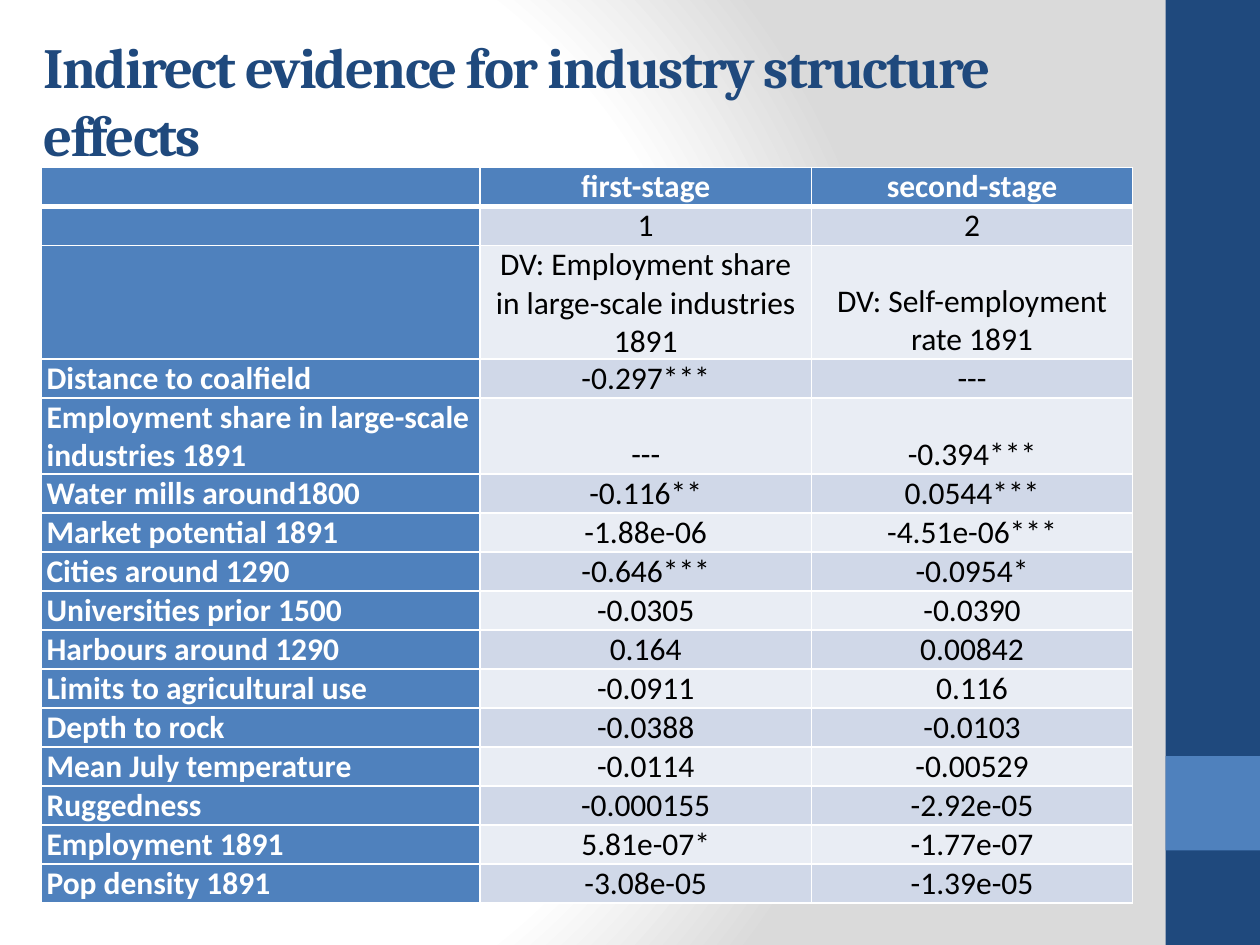
from typing import NamedTuple

from pptx import Presentation
from pptx.dml.color import RGBColor
from pptx.enum.shapes import MSO_SHAPE
from pptx.enum.text import MSO_ANCHOR, PP_ALIGN
from pptx.oxml import parse_xml
from pptx.oxml.ns import nsdecls
from pptx.util import Inches, Pt

RECT = MSO_SHAPE.RECTANGLE
LEFT, CENTER = PP_ALIGN.LEFT, PP_ALIGN.CENTER
TOP, MIDDLE, BOTTOM = MSO_ANCHOR.TOP, MSO_ANCHOR.MIDDLE, MSO_ANCHOR.BOTTOM

NAVY = RGBColor(0x1F, 0x49, 0x7D)
BLUE = RGBColor(0x4F, 0x81, 0xBD)
BAND_DARK = RGBColor(0xD0, 0xD8, 0xE8)
BAND_LIGHT = RGBColor(0xE9, 0xED, 0xF4)
WHITE = RGBColor(0xFF, 0xFF, 0xFF)
BLACK = RGBColor(0x00, 0x00, 0x00)
GREY = RGBColor(0xDA, 0xDA, 0xDA)


class Bar(NamedTuple):
    top: float
    height: float
    color: RGBColor


class Row(NamedTuple):
    label: str
    first: str
    second: str
    height: float = 0.31


BARS = [Bar(0, 7.5, NAVY), Bar(6, 0.75, BLUE)]
COL_WIDTHS = [3.48, 2.63, 2.55]
TOP_ROWS = 2  # rows whose text sits at the top of the cell
ROWS = [
    Row("", "first-stage", "second-stage"),
    Row("", "1", "2"),
    Row("", "DV: Employment share in large-scale industries 1891",
        "DV: Self-employment rate 1891", 0.58),
    Row("Distance to coalfield", "-0.297***", "---"),
    Row("Employment share in large-scale industries 1891", "---", "-0.394***", 0.58),
    Row("Water mills around1800", "-0.116**", "0.0544***"),
    Row("Market potential 1891", "-1.88e-06", "-4.51e-06***"),
    Row("Cities around 1290", "-0.646***", "-0.0954*"),
    Row("Universities prior 1500", "-0.0305", "-0.0390"),
    Row("Harbours around 1290", "0.164", "0.00842"),
    Row("Limits to agricultural use", "-0.0911", "0.116"),
    Row("Depth to rock", "-0.0388", "-0.0103"),
    Row("Mean July temperature", "-0.0114", "-0.00529"),
    Row("Ruggedness", "-0.000155", "-2.92e-05"),
    Row("Employment 1891", "5.81e-07*", "-1.77e-07"),
    Row("Pop density 1891", "-3.08e-05", "-1.39e-05"),
]


def write_text(tf, text: str, *, size: float = 18, font: str = "Calibri",
               color: RGBColor = BLACK, bold: bool = False,
               align: PP_ALIGN = LEFT, spacing: float = 0) -> None:
    p = tf.paragraphs[0]
    p.alignment = align
    p.font.size = Pt(size)
    if not text:
        return
    r = p.add_run()
    r.text = text
    r.font.size, r.font.name = Pt(size), font
    r.font.bold, r.font.color.rgb = bold, color
    if spacing:
        r.font._element.set("spc", str(int(spacing * 100)))


def set_background(slide) -> None:
    stops = "".join(
        f'<a:gs pos="{pos * 1000}"><a:srgbClr val="{color}"/></a:gs>'
        for pos, color in ((0, WHITE), (75, WHITE), (100, GREY)))
    slide.element.cSld.insert(0, parse_xml(
        f'<p:bg {nsdecls("p", "a")}><p:bgPr><a:gradFill rotWithShape="1">'
        f'<a:gsLst>{stops}</a:gsLst><a:path path="circle">'
        '<a:fillToRect l="20000" t="50000" r="100000" b="50000"/></a:path>'
        '</a:gradFill><a:effectLst/></p:bgPr></p:bg>'))


def add_bar(slide, bar: Bar) -> None:
    sp = slide.shapes.add_shape(RECT, Inches(9.25), Inches(bar.top),
                                Inches(0.75), Inches(bar.height))
    sp.shadow.inherit = False
    sp.fill.solid()
    sp.fill.fore_color.rgb = bar.color
    sp.line.fill.background()


def set_borders(cell, top: float, bottom: float) -> None:
    tc_pr = cell._tc.get_or_add_tcPr()
    sides = (("lnL", 1), ("lnR", 1), ("lnT", top), ("lnB", bottom))
    for i, (side, width) in enumerate(sides):
        tc_pr.insert(i, parse_xml(
            f'<a:{side} {nsdecls("a")} w="{Pt(width)}"><a:solidFill>'
            f'<a:srgbClr val="{WHITE}"/></a:solidFill></a:{side}>'))


def fill_cell(cell, text: str, row: int, col: int) -> None:
    is_head = row == 0 or col == 0
    band = BAND_DARK if row % 2 else BAND_LIGHT
    cell.fill.solid()
    cell.fill.fore_color.rgb = BLUE if is_head else band
    cell.margin_left = cell.margin_right = Inches(0.04)
    cell.margin_top = cell.margin_bottom = 0
    cell.vertical_anchor = TOP if row < TOP_ROWS else BOTTOM
    write_text(cell.text_frame, text, bold=is_head,
               color=WHITE if is_head else BLACK,
               align=CENTER if col else LEFT)
    set_borders(cell, top=3 if row == 1 else 1, bottom=3 if row == 0 else 1)


def add_results_table(slide) -> None:
    table = slide.shapes.add_table(
        len(ROWS), len(COL_WIDTHS), Inches(0.33), Inches(1.33),
        Inches(sum(COL_WIDTHS)), Inches(sum(row.height for row in ROWS))).table
    for col, width in enumerate(COL_WIDTHS):
        table.columns[col].width = Inches(width)
    for i, row in enumerate(ROWS):
        table.rows[i].height = Inches(row.height)
        for j, text in enumerate((row.label, row.first, row.second)):
            fill_cell(table.cell(i, j), text, i, j)


def main() -> None:
    prs = Presentation()
    prs.slide_width, prs.slide_height = Inches(10), Inches(7.5)
    slide = prs.slides.add_slide(prs.slide_layouts[6])

    # Background and side bars
    set_background(slide)
    for bar in BARS:
        add_bar(slide, bar)

    # Title
    tf = slide.shapes.add_textbox(Inches(0.25), Inches(0.42),
                                  Inches(8.92), Inches(0.75)).text_frame
    tf.word_wrap = True
    tf.vertical_anchor = MIDDLE
    write_text(tf, "Indirect evidence for industry structure effects",
               size=32.4, font="Cambria", color=NAVY, bold=True, spacing=-1)

    # Regression results
    add_results_table(slide)
    prs.save("out.pptx")


if __name__ == "__main__":
    main()
